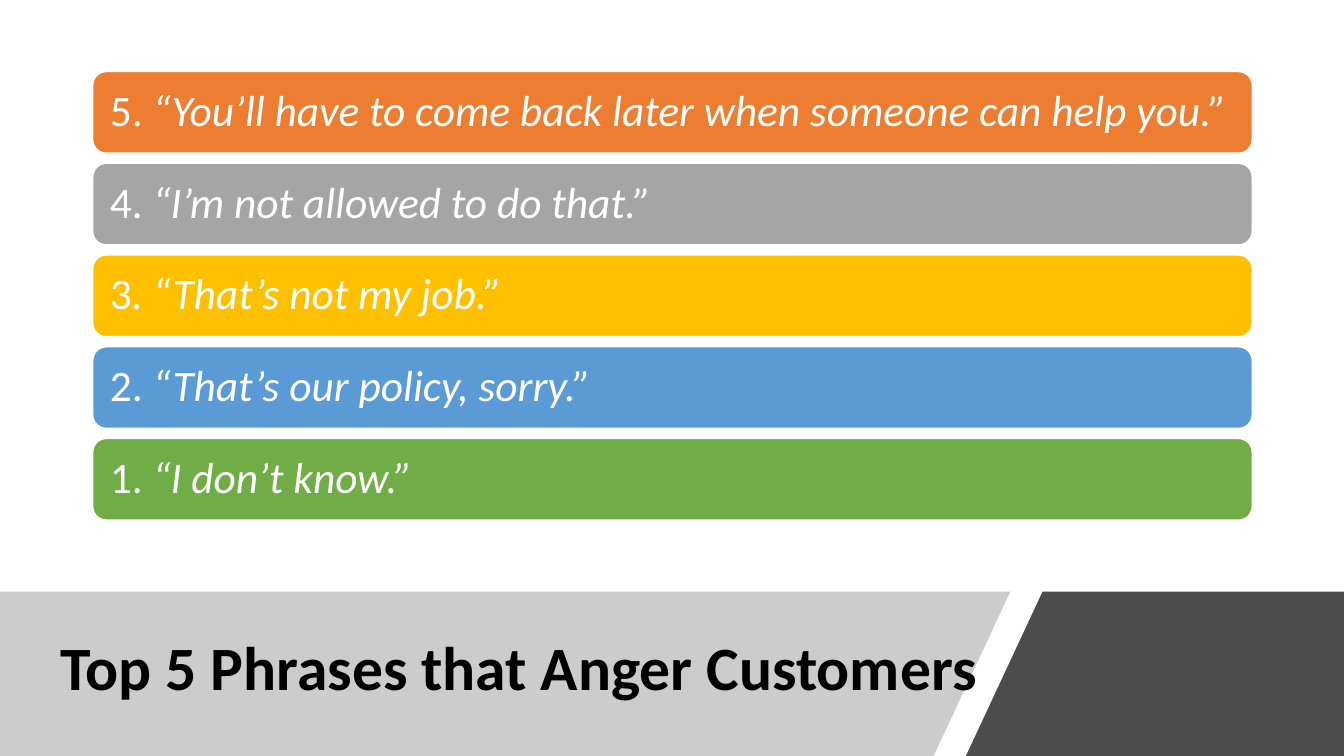
from dataclasses import dataclass

from lxml import etree
from pptx import Presentation
from pptx.dml.color import RGBColor
from pptx.enum import shapes, text
from pptx.oxml import ns
from pptx.util import Inches, Pt


@dataclass(frozen=True)
class Theme:
    font: str = "Calibri"
    title_size: int = 44
    phrase_size: int = 31
    dark: str = "000000"
    light: str = "FFFFFF"
    band: str = "808080"
    band_opacity: int = 40
    corner_opacity: int = 70


THEME = Theme()
TITLE = "Top 5 Phrases that Anger Customers"
# upright text, italic text, bar colour
PHRASES = [
    ("5. ", "“You’ll have to come back later when someone can help you.”", "ED7D31"),
    ("4. ", "“I’m not allowed to do that.”", "A5A5A5"),
    ("3", ". “That’s not my job.”", "FFC000"),
    ("2. ", "“That’s our policy, sorry.”", "5B9BD5"),
    ("1. ", "“I don’t know.”", "70AD47"),
]


def style_text(paragraph, size, color):
    paragraph.alignment = text.PP_ALIGN.LEFT
    paragraph.line_spacing = 0.9
    paragraph.font.name = THEME.font
    paragraph.font.size = Pt(size)
    paragraph.font.color.rgb = RGBColor.from_string(color)


def add_panel(slide, points, color, opacity):
    """Draw a borderless translucent polygon through points given in inches."""
    corners = [(Inches(x), Inches(y)) for x, y in points]
    builder = slide.shapes.build_freeform(*corners[0])
    builder.add_line_segments(corners[1:], close=True)
    panel = builder.convert_to_shape()
    panel.shadow.inherit = False
    panel.line.fill.background()
    panel.fill.solid()
    panel.fill.fore_color.rgb = RGBColor.from_string(color)
    fill_color = panel.element.spPr.find(".//" + ns.qn("a:srgbClr"))
    etree.SubElement(fill_color, ns.qn("a:alpha"), val=str(opacity * 1000))
    return panel


def add_title_band(slide, left, top, width, height):
    """Place the title on a slanted band, with a dark corner to its right."""
    right, bottom = left + width, top + height
    slant, band_end, corner_start = 0.76, left + 10.02, left + 10.34
    band = add_panel(
        slide,
        [(left, top), (band_end, top), (band_end - slant, bottom), (left, bottom)],
        THEME.band, THEME.band_opacity)

    title = slide.shapes.title
    title.left, title.top = Inches(left + 0.5), Inches(top + 0.18)
    title.width, title.height = Inches(9.72), Inches(1.2)
    title.text = TITLE
    frame = title.text_frame
    frame.auto_size = text.MSO_AUTO_SIZE.NONE
    frame.vertical_anchor = text.MSO_ANCHOR.MIDDLE
    style_text(frame.paragraphs[0], THEME.title_size, THEME.dark)
    frame.paragraphs[0].font.bold = True
    band.element.addnext(title.element)

    add_panel(
        slide,
        [(corner_start, top), (right, top), (right, bottom), (corner_start - slant, bottom)],
        THEME.dark, THEME.corner_opacity)


def add_phrase_bars(slide, left, top, width, height):
    """Stack one rounded bar per phrase, evenly spaced down the box."""
    bar_height = 0.81
    step = (height - bar_height) / (len(PHRASES) - 1)
    for row, (upright, italic, color) in enumerate(PHRASES):
        bar = slide.shapes.add_shape(
            shapes.MSO_SHAPE.ROUNDED_RECTANGLE,
            Inches(left), Inches(top + row * step), Inches(width), Inches(bar_height))
        bar.shadow.inherit = False
        bar.fill.solid()
        bar.fill.fore_color.rgb = RGBColor.from_string(color)
        bar.line.color.rgb = RGBColor.from_string(THEME.light)
        bar.line.width = Pt(1)

        frame = bar.text_frame
        frame.word_wrap = True
        frame.vertical_anchor = text.MSO_ANCHOR.MIDDLE
        frame.margin_left = frame.margin_right = Inches(0.13)
        frame.margin_top = frame.margin_bottom = Inches(0.13)
        paragraph = frame.paragraphs[0]
        style_text(paragraph, THEME.phrase_size, THEME.light)
        paragraph.add_run().text = upright
        quote = paragraph.add_run()
        quote.text = italic
        quote.font.italic = True


def main():
    presentation = Presentation()
    presentation.slide_width, presentation.slide_height = Inches(13.33), Inches(7.5)
    title_only = presentation.slide_layouts.get_by_name("Title Only")
    slide = presentation.slides.add_slide(title_only)
    add_title_band(slide, 0, 5.87, 13.33, 1.63)
    add_phrase_bars(slide, 0.92, 0.71, 11.5, 4.45)
    presentation.save("out.pptx")


if __name__ == "__main__":
    main()
